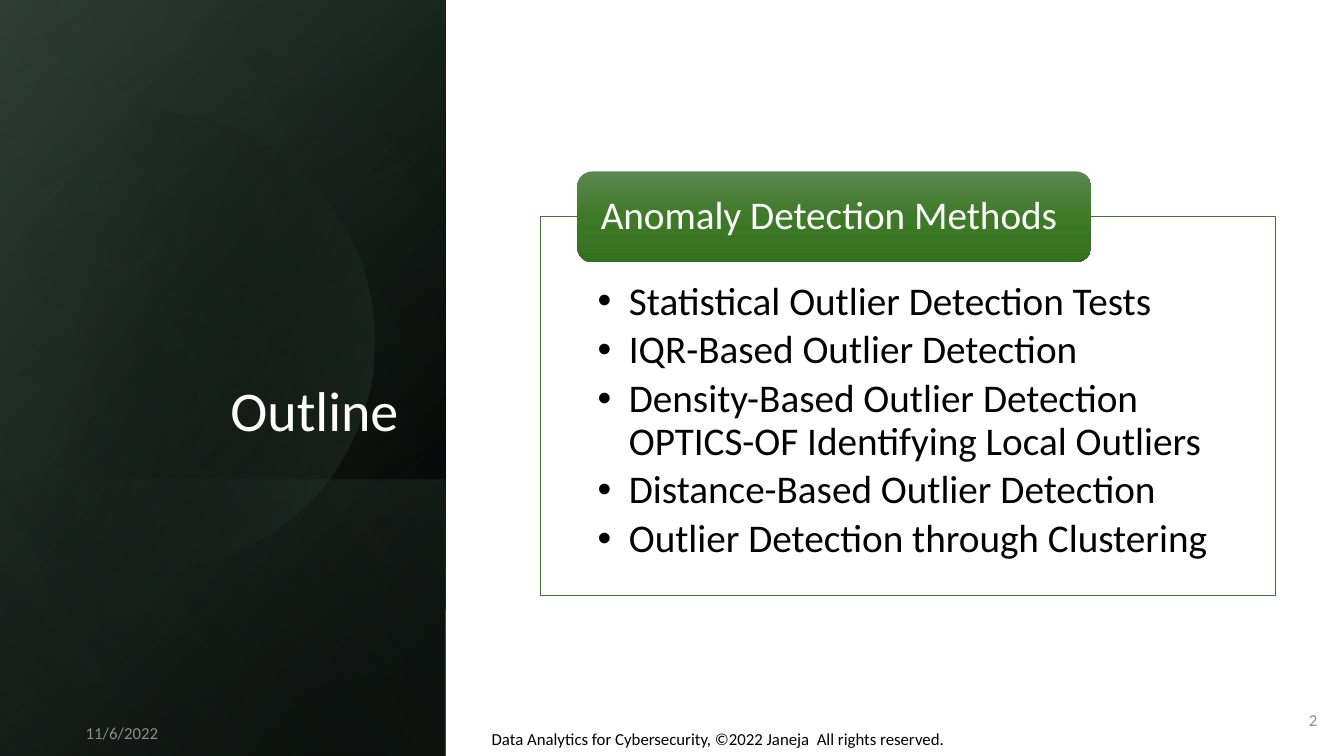
from lxml import etree
from pptx import Presentation
from pptx import util as u
from pptx.dml import color
from pptx.enum import shapes, text
from pptx.oxml import ns

COLORS = {
    "white": "FFFFFF", "black": "000000", "night": "26352D", "moss": "33473C",
    "sage": "789E89", "leaf": "3F762A", "light": "5D8752", "mid": "3D7A26",
    "deep": "35701F", "gray": "8C8C8C",
}
SIDE = (-3.91, 3.91, 19.05, 11.23)
SIDE_LAYERS = [
    (SIDE, [(8, "black", 100), (100, "night", 100)], 50),
    (SIDE, [(0, "black", 0), (99, "moss", 46)], 30),
    ((2.13, 9.96, 6.96, 11.23), [(2, "moss", 29), (100, "black", 30)], 130),
]
GLOW = [(0, "black", 0), (99, "sage", 11)]
CIRCLE_START = (3.78, 2.79)
CIRCLE_CURVES = [
    [(6.25, 2.84), (8.51, 4.5), (9.22, 6.99)],
    [(10.11, 10.08), (8.33, 13.28), (5.26, 14.17)],
    [(3.33, 14.73), (1.35, 14.25), (-0.08, 13.06)],
    [(-0.38, 12.78)] * 3,
    [(-0.38, 4.45)] * 3,
    [(0, 4.09)] * 3,
    [(0.58, 3.61), (1.27, 3.25), (2.03, 3.02)],
    [(2.62, 2.87), (3.2, 2.79), CIRCLE_START],
]
METHODS = [
    "Statistical Outlier Detection Tests",
    "IQR-Based Outlier Detection",
    "Density-Based Outlier Detection OPTICS-OF Identifying Local Outliers",
    "Distance-Based Outlier Detection",
    "Outlier Detection through Clustering",
]
INSET = (0.25, 0.13, 0.25, 0.13)


def rgb(name):
    return color.RGBColor.from_string(COLORS[name])


def curve_points(start, curves, steps=16):
    points = []
    for c1, c2, end in curves:
        for step in range(1, steps + 1):
            t = step / steps
            weights = ((1 - t) ** 3, 3 * t * (1 - t) ** 2, 3 * t * t * (1 - t), t ** 3)
            points.append(tuple(
                u.Cm(sum(w * p[axis] for w, p in zip(weights, (start, c1, c2, end))))
                for axis in (0, 1)))
        start = end
    return points


class SlideBuilder:
    font = "Calibri"
    line_spacing = 0.9

    def __init__(self, slide):
        self.slide = slide

    def shape(self, kind, place):
        shape = self.slide.shapes.add_shape(kind, *map(u.Cm, place))
        shape.shadow.inherit = False
        shape.line.fill.background()
        return shape

    def gradient(self, shape, stops, angle):
        shape.fill.background()
        props = shape._element.spPr
        old = props.find(ns.qn("a:noFill"))
        fill = etree.Element(ns.qn("a:gradFill"), rotWithShape="1")
        stop_list = etree.SubElement(fill, ns.qn("a:gsLst"))
        for position, name, opacity in stops:
            stop = etree.SubElement(stop_list, ns.qn("a:gs"), pos=str(position * 1000))
            tone = etree.SubElement(stop, ns.qn("a:srgbClr"), val=COLORS[name])
            if opacity < 100:
                etree.SubElement(tone, ns.qn("a:alpha"), val=str(opacity * 1000))
        etree.SubElement(fill, ns.qn("a:lin"), ang=str(angle * 60000), scaled="0")
        props.replace(old, fill)

    def side_layer(self, place, stops, angle):
        layer = self.shape(shapes.MSO_SHAPE.RECTANGLE, place)
        layer.rotation = 90
        layer._element.spPr.find(ns.qn("a:xfrm")).set("flipH", "1")
        self.gradient(layer, stops, angle)

    def circle(self, start, curves, stops, angle):
        builder = self.slide.shapes.build_freeform(*map(u.Cm, start))
        builder.add_line_segments(curve_points(start, curves), close=True)
        circle = builder.convert_to_shape()
        circle.shadow.inherit = False
        circle.line.fill.background()
        self.gradient(circle, stops, angle)

    def fill_text(self, shape, lines, size, name, align="LEFT", anchor="MIDDLE",
                  inset=INSET, bullet=False):
        frame = shape.text_frame
        sides = ("margin_left", "margin_top", "margin_right", "margin_bottom")
        frame_format = dict(zip(sides, map(u.Cm, inset)), word_wrap=True,
                            vertical_anchor=text.MSO_ANCHOR[anchor])
        for key, value in frame_format.items():
            setattr(frame, key, value)
        para_format = {"alignment": text.PP_ALIGN[align],
                       "line_spacing": self.line_spacing,
                       "space_after": u.Pt(4.6 if bullet else 0)}
        font_format = {"name": self.font, "size": u.Pt(size)}
        for index, line in enumerate(lines):
            para = frame.add_paragraph() if index else frame.paragraphs[0]
            for key, value in para_format.items():
                setattr(para, key, value)
            span = para.add_run()
            span.text = line
            for key, value in font_format.items():
                setattr(span.font, key, value)
            span.font.color.rgb = rgb(name)
            if bullet:
                props = para._p.get_or_add_pPr()
                props.set("marL", str(u.Cm(0.79)))
                props.set("indent", str(-u.Cm(0.79)))
                etree.SubElement(props, ns.qn("a:buFont"), typeface="Arial")
                etree.SubElement(props, ns.qn("a:buChar"), char="•")

    def label(self, place, line, size, name, **layout):
        box = self.slide.shapes.add_textbox(*map(u.Cm, place))
        self.fill_text(box, [line], size, name, **layout)

    def method_list(self, place, lines):
        box = self.shape(shapes.MSO_SHAPE.RECTANGLE, place)
        box.fill.solid()
        box.fill.fore_color.rgb = rgb("white")
        box.line.color.rgb = rgb("leaf")
        box.line.width = u.Pt(0.5)
        self.fill_text(box, lines, 28, "black", anchor="TOP",
                       inset=(1.45, 1.63, 1.45, 0.56), bullet=True)

    def header(self, place, line):
        box = self.shape(shapes.MSO_SHAPE.ROUNDED_RECTANGLE, place)
        self.gradient(box, [(0, "light", 100), (50, "mid", 100), (100, "deep", 100)], 90)
        self.fill_text(box, [line], 28, "white", inset=(0.48, 0, 0.48, 0))


def main():
    deck = Presentation()
    deck.slide_width, deck.slide_height = u.Cm(33.87), u.Cm(19.05)
    page = SlideBuilder(deck.slides.add_slide(deck.slide_layouts[6]))
    for place, stops, angle in SIDE_LAYERS:
        page.side_layer(place, stops, angle)
    page.circle(CIRCLE_START, CIRCLE_CURVES, [(29, "black", 0), (100, "moss", 43)], 14)
    page.side_layer(SIDE, GLOW, 120)
    page.label((1.63, 4.67, 8.66, 6.65), "Outline", 40, "white",
               align="RIGHT", anchor="BOTTOM")
    page.method_list((13.61, 5.46, 18.52, 9.55), METHODS)
    page.header((14.55, 4.32, 12.95, 2.29), "Anomaly Detection Methods")
    page.label((1.91, 17.98, 2.57, 1.02), "11/6/2022", 12, "gray")
    page.label((11.84, 17.98, 12.52, 1.02),
               "Data Analytics for Cybersecurity, ©2022 Janeja  All rights reserved.",
               12, "black", align="CENTER", anchor="BOTTOM")
    page.label((25.83, 17.65, 7.62, 1.02), "2", 12, "gray", align="RIGHT")
    deck.save("out.pptx")


if __name__ == "__main__":
    main()
